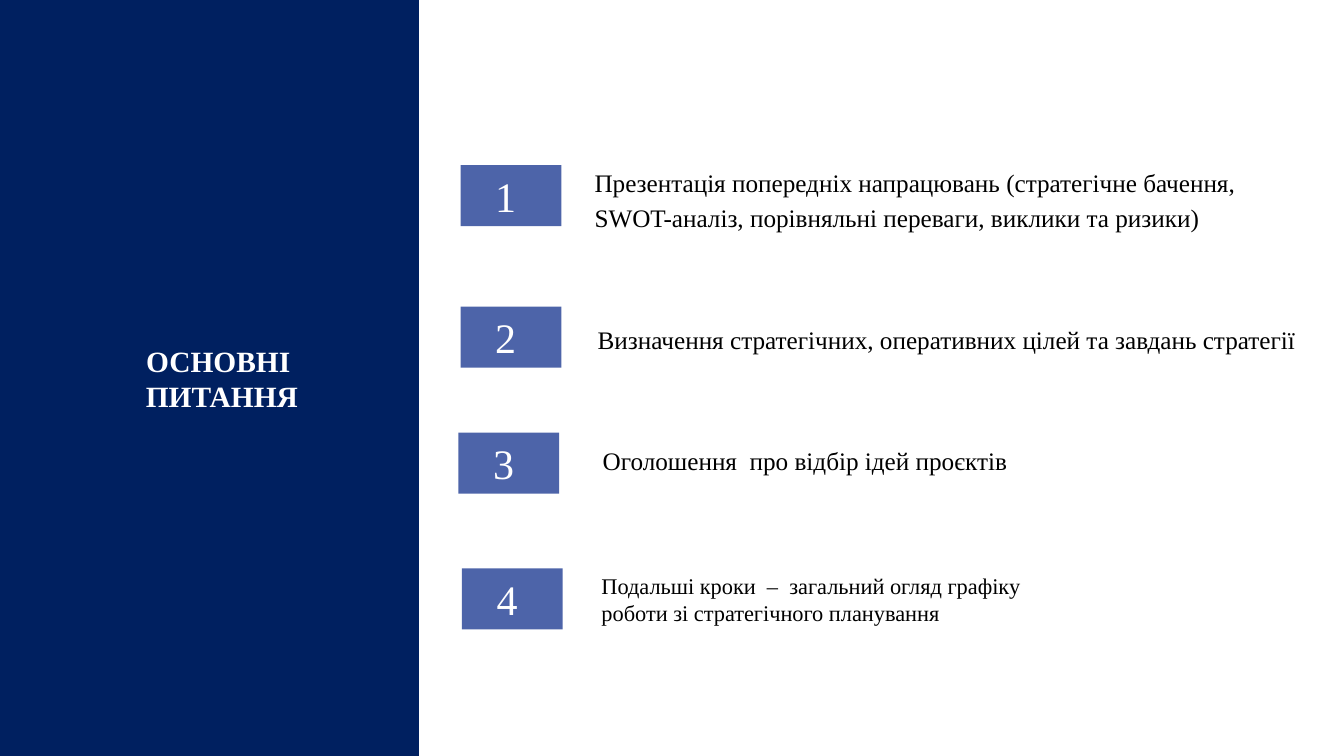
import pptx
import pptx.util
import pptx.dml.color
import pptx.enum.shapes
import pptx.enum.text

Pt = pptx.util.Pt
ANCHOR = pptx.enum.text.MSO_ANCHOR
CENTER = pptx.enum.text.PP_ALIGN.CENTER

FONT = "Times New Roman"
NAVY, BLUE, WHITE, BLACK = "002060", "4D64A9", "FFFFFF", "000000"

# badge (left, top), text (left, top, width, height), lines, size, line spacing
AGENDA = [
    ((329, 118), (417.6, 113, 526, 31),
     ["Презентація попередніх напрацювань (стратегічне бачення, "
      "SWOT-аналіз, порівняльні переваги, виклики та ризики)"], 18, 1.15),
    ((329, 219), (419.8, 224.6, 537, 31),
     ["Визначення стратегічних, оперативних цілей та завдань стратегії"],
     18, 1.15),
    ((327.5, 309), (423.4, 314.6, 487, 29),
     ["Оголошення  про відбір ідей проєктів"], 18, 1),
    ((330, 406), (422.6, 405.4, 529, 46),
     ["Подальші кроки  –  загальний огляд графіку",
      "роботи зі стратегічного планування"], 16, 1),
]


def rgb(color):
    return pptx.dml.color.RGBColor.from_string(color)


def write(tf, lines, size, color=BLACK, bold=False, align=None, spacing=1,
          anchor=ANCHOR.TOP, margins=(7.2, 3.6)):
    """Fill a text frame, one paragraph per line."""
    tf.word_wrap = True
    tf.auto_size = pptx.enum.text.MSO_AUTO_SIZE.NONE
    tf.vertical_anchor = anchor
    tf.margin_left = tf.margin_right = Pt(margins[0])
    tf.margin_top = tf.margin_bottom = Pt(margins[1])
    for i, line in enumerate(lines):
        p = tf.paragraphs[0] if i == 0 else tf.add_paragraph()
        p.alignment = align
        p.line_spacing = spacing
        r = p.add_run()
        r.text = line
        r.font.name = FONT
        r.font.size = Pt(size)
        r.font.bold = bold
        r.font.color.rgb = rgb(color)


def add_rect(s, left, top, width, height, fill, line=None):
    sp = s.shapes.add_shape(pptx.enum.shapes.MSO_SHAPE.RECTANGLE,
                            Pt(left), Pt(top), Pt(width), Pt(height))
    sp.shadow.inherit = False
    sp.fill.solid()
    sp.fill.fore_color.rgb = rgb(fill)
    if line:
        sp.line.color.rgb = rgb(line)
        sp.line.width = Pt(1)
    else:
        sp.line.fill.background()
    return sp


def add_badge(s, left, top, number):
    sp = add_rect(s, left, top, 72, 43.6, BLUE)
    write(sp.text_frame, [f"{number} "], 30, color=WHITE, align=CENTER,
          anchor=ANCHOR.MIDDLE)


def add_text(s, box, lines, size, **fmt):
    sp = s.shapes.add_textbox(*map(Pt, box))
    write(sp.text_frame, lines, size, **fmt)


def place_title(s, lines):
    """Move the title placeholder onto the side panel, in front of it."""
    sp = s.shapes.title
    sp.left, sp.top, sp.width, sp.height = map(Pt, (0, 242, 317, 49))
    write(sp.text_frame, lines, 21, color=WHITE, bold=True, align=CENTER,
          margins=(5, 2.9))
    sp.element.getparent().append(sp.element)


def main():
    prs = pptx.Presentation()
    prs.slide_width, prs.slide_height = Pt(960), Pt(540)
    s = prs.slides.add_slide(prs.slide_layouts.get_by_name("Title Only"))
    add_rect(s, 0, 0, 298.8, 540, NAVY, line=NAVY)
    place_title(s, ["ОСНОВНІ ", "ПИТАННЯ"])
    for number, (badge, box, lines, size, spacing) in enumerate(AGENDA, 1):
        add_badge(s, *badge, number)
        add_text(s, box, lines, size, spacing=spacing)
    prs.save("out.pptx")


if __name__ == "__main__":
    main()
